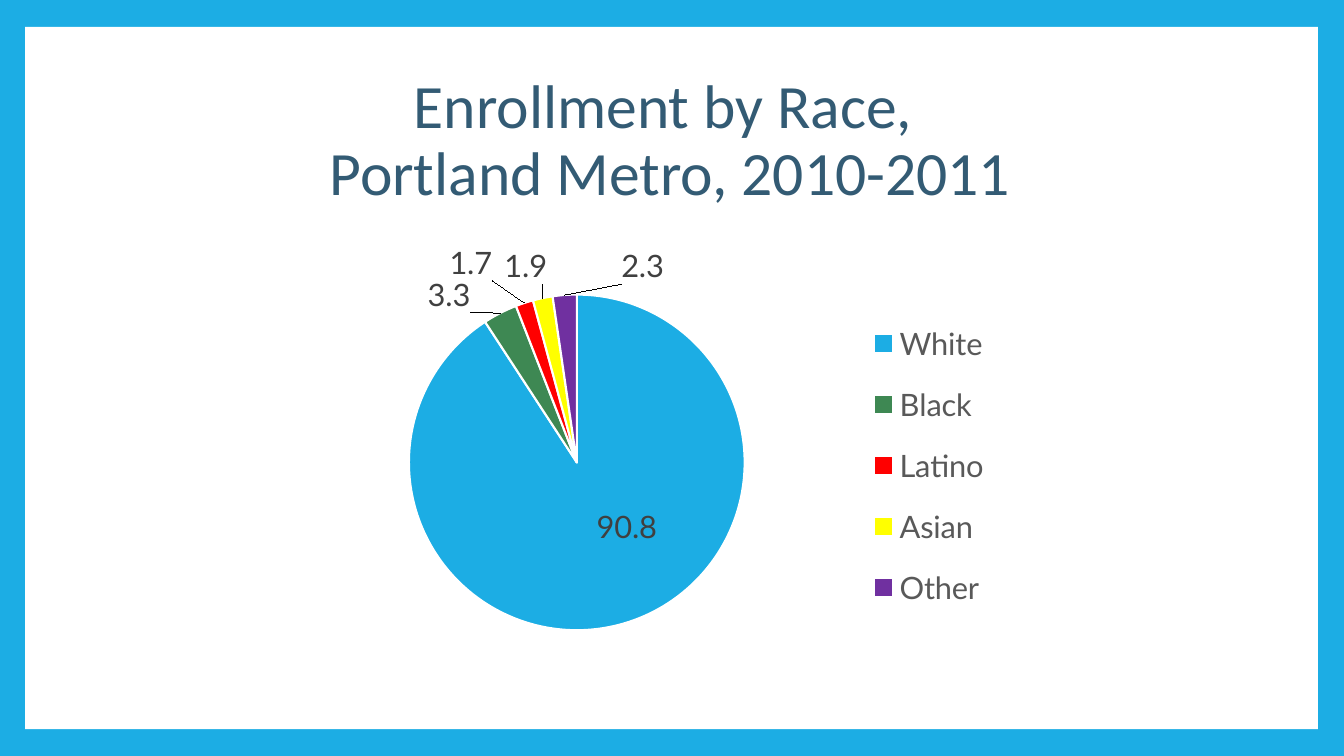
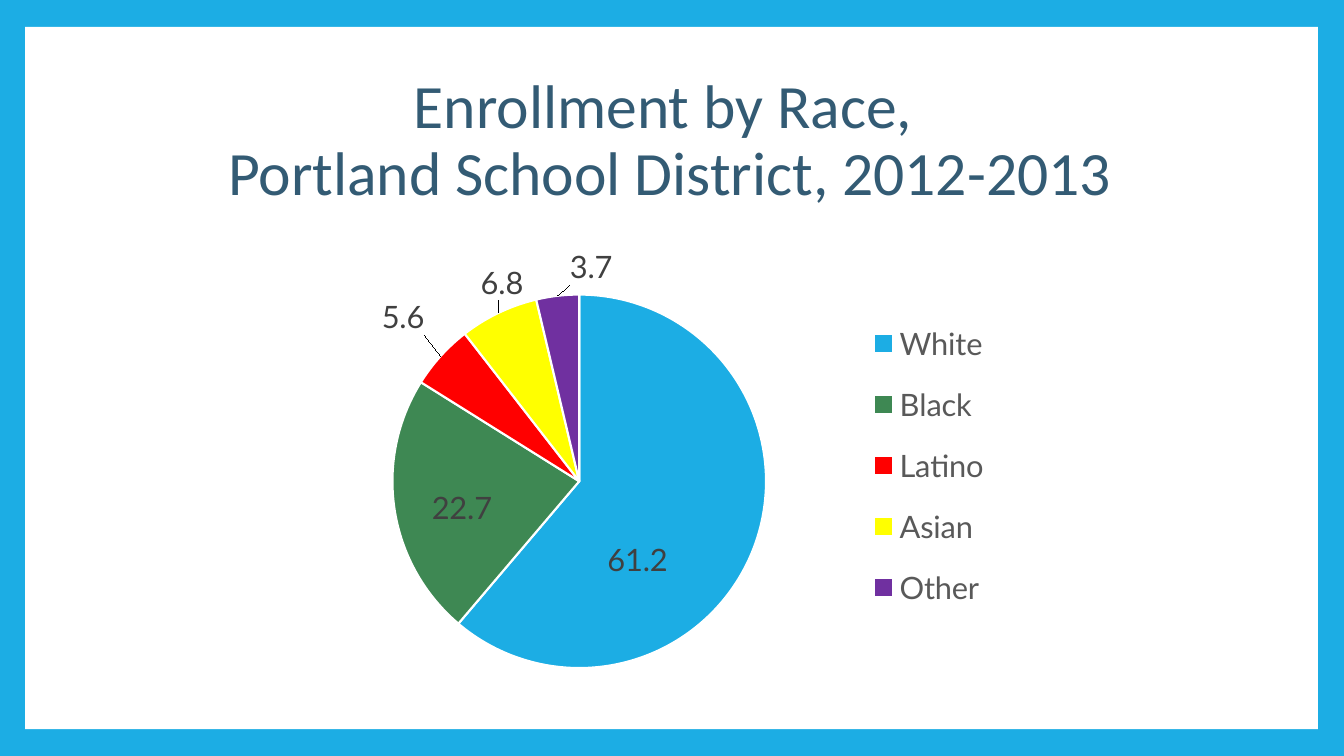
from lxml import etree
from pptx import Presentation
from pptx.chart.data import CategoryChartData
from pptx.dml.color import RGBColor
from pptx.enum.chart import XL_CHART_TYPE, XL_LABEL_POSITION, XL_LEGEND_POSITION
from pptx.enum.shapes import MSO_SHAPE
from pptx.enum.text import MSO_ANCHOR, PP_ALIGN
from pptx.oxml.ns import qn
from pptx.util import Inches, Pt

PIE = XL_CHART_TYPE.PIE
CENTER, OUTSIDE = XL_LABEL_POSITION.CENTER, XL_LABEL_POSITION.OUTSIDE_END
LEGEND_RIGHT = XL_LEGEND_POSITION.RIGHT
RECTANGLE = MSO_SHAPE.RECTANGLE
MIDDLE, CENTERED = MSO_ANCHOR.MIDDLE, PP_ALIGN.CENTER

SKY = RGBColor(0x1C, 0xAD, 0xE4)
WHITE = RGBColor(0xFF, 0xFF, 0xFF)
NAVY = RGBColor(0x33, 0x5B, 0x74)
GREEN = RGBColor(0x3E, 0x88, 0x53)
RED = RGBColor(0xFF, 0x00, 0x00)
YELLOW = RGBColor(0xFF, 0xFF, 0x00)
PURPLE = RGBColor(0x70, 0x30, 0xA0)
DARK_GRAY = RGBColor(0x40, 0x40, 0x40)
GRAY = RGBColor(0x59, 0x59, 0x59)

RACES = {"White": SKY, "Black": GREEN, "Latino": RED, "Asian": YELLOW, "Other": PURPLE}
TITLE_FONT = {"name": "Calibri", "size": Pt(44)}
LABEL_FONT = {"name": "Lato", "size": Pt(22)}
COLUMNS, ROWS = 16, 9

# Columns and rows: left, top, width, height
PANEL = (0.3, 0.32, 15.39, 8.36)
TITLE = (1.5, 0.8, 12.96, 1.78)
CHART = (1.21, 2.84, 12.96, 5.3)
# Percent of the chart: left, top, width, height
LEGEND = (69, 14, 14, 74)

# Each label is (value, position, (right, down) shift in percent of the chart)
PAGES = [
    {
        "title": "Enrollment by Race, \vPortland Metro, 2010-2011",
        "pie": (28.2, 12.6, 30.9, 75.4),
        "slices": [
            (90.8, CENTER, (2.4, -3.6)),
            (3.3, OUTSIDE, (-2.5, 1.1)),
            (1.7, OUTSIDE, (-2.8, -3.8)),
            (1.9, OUTSIDE, (0.5, -1.8)),
            (2.3, OUTSIDE, (7.2, -1.1)),
        ],
    },
    {
        "title": "Enrollment by Race, \vPortland School District, 2012-2013",
        "pie": (26.7, 12.6, 34.35, 83.9),
        "slices": [
            (61.2, CENTER, (-2.7, 10.3)),
            (22.7, CENTER, (-2.3, 2.7)),
            (5.6, OUTSIDE, (-1.1, -3.8)),
            (6.8, OUTSIDE, (2.5, -1.6)),
            (3.7, OUTSIDE, (5.1, -1.1)),
        ],
    },
]


def set_font(font, color, values):
    for name, value in values.items():
        setattr(font, name, value)
    font.color.rgb = color


def set_layout(parent, index, percents, modes=()):
    """Give a chart part a manual layout, as child number index."""
    for old in parent.findall(qn("c:layout")):
        parent.remove(old)
    layout = etree.Element(qn("c:layout"))
    manual = etree.SubElement(layout, qn("c:manualLayout"))
    values = [*modes, *zip("xywh", (percent / 100 for percent in percents))]
    for tag, value in values:
        etree.SubElement(manual, qn(f"c:{tag}")).set("val", f"{value}")
    parent.insert(index, layout)


class Report:
    def __init__(self):
        self.deck = Presentation()
        self.deck.slide_width, self.deck.slide_height = Inches(13.33), Inches(7.5)
        background = self.deck.slide_master.background.fill
        background.solid()
        background.fore_color.rgb = SKY
        self.page = None

    def grid(self, area):
        across = self.deck.slide_width / COLUMNS
        down = self.deck.slide_height / ROWS
        return [round(n * cell) for n, cell in zip(area, (across, down) * 2)]

    def add_page(self):
        self.page = self.deck.slides.add_slide(self.deck.slide_layouts.get_by_name("Title Only"))
        panel = self.page.shapes.add_shape(RECTANGLE, *self.grid(PANEL))
        panel.shadow.inherit = False
        panel.fill.solid()
        panel.fill.fore_color.rgb = WHITE
        panel.line.fill.background()
        self.page.shapes.element.insert(2, panel.element)  # behind the title

    def add_title(self, text):
        title = self.page.shapes.title
        title.left, title.top, title.width, title.height = self.grid(TITLE)
        frame = title.text_frame
        frame.text = text
        frame.vertical_anchor = MIDDLE
        para = frame.paragraphs[0]
        para.alignment = CENTERED
        para.line_spacing = 0.9
        for span in para.runs:
            set_font(span.font, NAVY, TITLE_FONT)

    def add_pie(self, pie, slices):
        data = CategoryChartData()
        data.categories = list(RACES)
        data.add_series("Series 1", [value for value, _, _ in slices])
        chart = self.page.shapes.add_chart(PIE, *self.grid(CHART), data).chart
        chart.has_title = False
        chart.font.name, chart.font.size = "Calibri", Pt(10)
        chart.has_legend = True
        chart.legend.position = LEGEND_RIGHT
        chart.legend.include_in_layout = False
        set_font(chart.legend.font, GRAY, LABEL_FONT)

        edges = [("xMode", "edge"), ("yMode", "edge")]
        plot_area = chart.element.find(f".//{qn('c:plotArea')}")
        set_layout(plot_area, 0, pie, [("layoutTarget", "inner"), *edges])
        set_layout(chart.element.find(f".//{qn('c:legend')}"), 1, LEGEND, edges)

        series = chart.plots[0].series[0]
        set_font(series.data_labels.font, DARK_GRAY, LABEL_FONT)
        series.data_labels.show_value = True
        for index, (color, (_, position, _)) in enumerate(zip(RACES.values(), slices)):
            point = series.points[index]
            point.format.fill.solid()
            point.format.fill.fore_color.rgb = color
            point.format.line.color.rgb = WHITE
            point.format.line.width = Pt(1.5)
            set_font(point.data_label.font, DARK_GRAY, LABEL_FONT)
            point.data_label.position = position
        labels = chart.element.findall(f".//{qn('c:dLbl')}")
        for label, (_, _, shift) in zip(labels, slices):
            set_layout(label, 1, shift)


def main():
    report = Report()
    for content in PAGES:
        report.add_page()
        report.add_title(content["title"])
        report.add_pie(content["pie"], content["slices"])
    report.deck.save("out.pptx")


if __name__ == "__main__":
    main()
